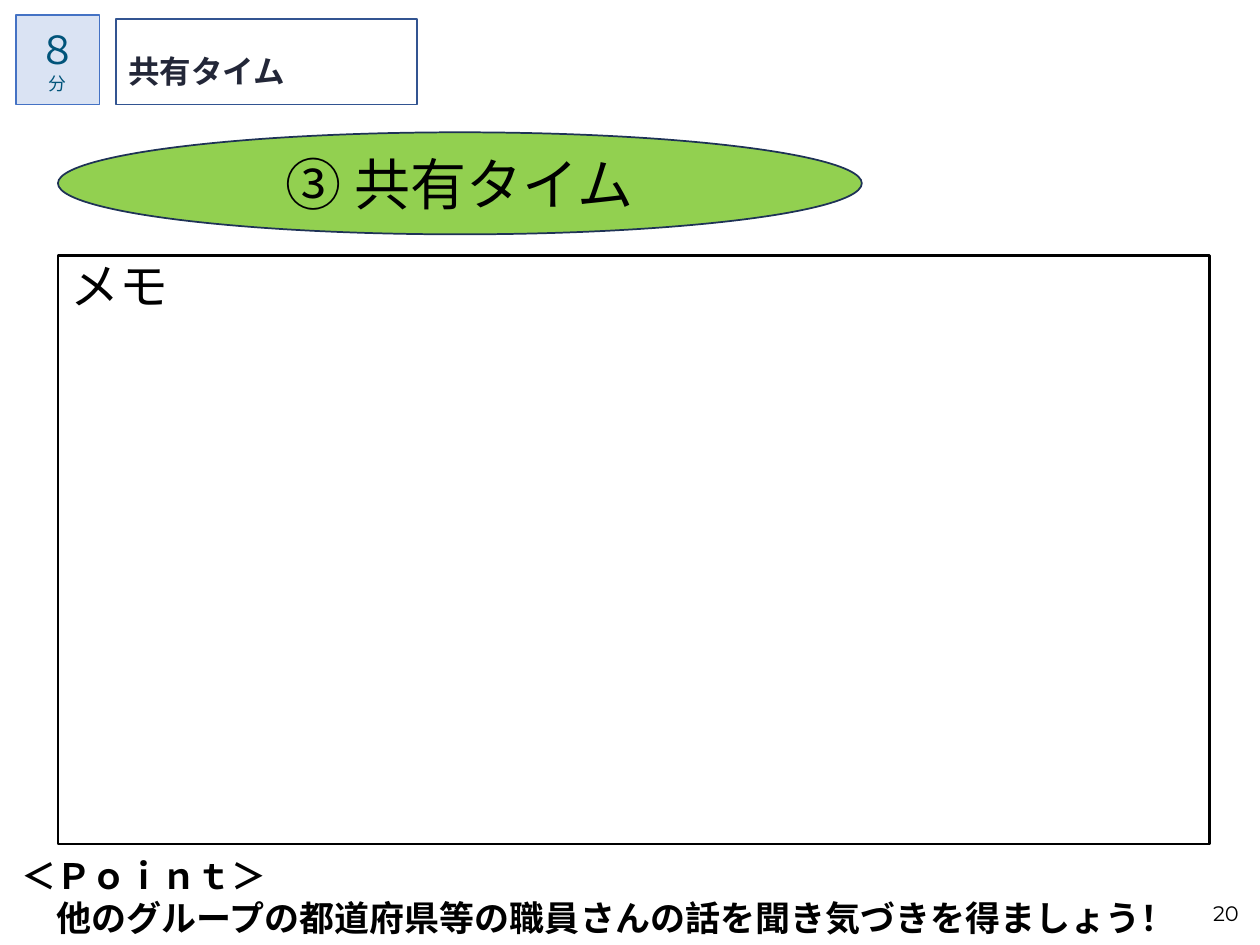
from lxml import etree
from pptx import Presentation
from pptx.dml.color import RGBColor
from pptx.enum.shapes import MSO_SHAPE
from pptx.enum.text import MSO_ANCHOR, PP_ALIGN
from pptx.oxml.ns import qn
from pptx.util import Inches, Pt

RECT, OVAL = MSO_SHAPE.RECTANGLE, MSO_SHAPE.OVAL
TOP, MIDDLE = MSO_ANCHOR.TOP, MSO_ANCHOR.MIDDLE
LEFT, CENTER = PP_ALIGN.LEFT, PP_ALIGN.CENTER
SLIDE_W, SLIDE_H = Inches(10), Inches(7.5)
JP_FONT = "Noto Sans CJK JP"
BLACK = "000000"
MARGIN = 4.6  # left edge of the main content, % of the width


def color(hex_code):
    return RGBColor.from_string(hex_code)


def area(x, y, w, h):
    """Turn percentages of the slide's size into lengths."""
    return [int(size * share / 100) for size, share in
            ((SLIDE_W, x), (SLIDE_H, y), (SLIDE_W, w), (SLIDE_H, h))]


def add_box(slide, kind, box, line, width=1, fill=None, anchor=MIDDLE):
    sp = slide.shapes.add_shape(kind, *area(*box))
    sp.shadow.inherit = False
    if fill:
        sp.fill.solid()
        sp.fill.fore_color.rgb = color(fill)
    else:
        sp.fill.background()
    sp.line.color.rgb = color(line)
    sp.line.width = Pt(width)
    return setup_frame(sp, anchor)


def add_label(slide, box, anchor=TOP):
    return setup_frame(slide.shapes.add_textbox(*area(*box)), anchor)


def setup_frame(sp, anchor):
    tf = sp.text_frame
    tf.word_wrap = True
    tf.vertical_anchor = anchor
    return tf


def add_text(tf, text, size, font, fg=BLACK, bold=False, align=LEFT,
             spacing=None, before=0, indent=0):
    p = tf.paragraphs[0] if not tf.text else tf.add_paragraph()
    p.alignment = align
    p.space_before = Pt(before)
    if spacing:
        p.line_spacing = spacing
    if indent:
        p._p.get_or_add_pPr().set("marL", str(Pt(indent)))
    r = p.add_run()
    r.text = text
    r.font.size = Pt(size)
    r.font.name = font
    r.font.bold = bold
    r.font.color.rgb = color(fg)
    # Japanese glyphs take the East Asian font
    ea = etree.SubElement(r.font._element, qn("a:ea"))
    ea.set("typeface", JP_FONT)


def main():
    prs = Presentation()
    prs.slide_width, prs.slide_height = SLIDE_W, SLIDE_H
    slide = prs.slides.add_slide(prs.slide_layouts[6])

    # Activity name
    tf = add_box(slide, OVAL, (MARGIN, 14, 63.8, 10.8), "1E3256", fill="92D050")
    add_text(tf, "③ 共有タイム", 32, JP_FONT, align=CENTER)

    # Memo area
    tf = add_box(slide, RECT, (MARGIN, 27.07, 91.4, 62.27), BLACK, 1.5, anchor=TOP)
    add_text(tf, "メモ", 28, "Calibri", spacing=0.9, before=10)

    # Page number
    tf = add_label(slide, (94.6, 93.33, 5.4, 6.67), MIDDLE)
    add_text(tf, "20", 12, "Montserrat", align=CENTER)

    # Time allowance and heading
    tf = add_box(slide, RECT, (1.3, 1.6, 6.6, 9.47), "4472C4", fill="DAE3F3")
    for text, size in (("８", 22.1), ("分", 10.2)):
        add_text(tf, text, size, "Lato", "01547A", align=CENTER)
    tf = add_box(slide, RECT, (9.2, 2, 23.9, 9.07), "325491")
    add_text(tf, "共有タイム", 18, "Lato", "232738", bold=True, spacing=1.5)

    # Point to remember
    tf = add_label(slide, (0.7, 89.73, 93.9, 10.27))
    add_text(tf, "＜Ｐｏｉｎｔ＞", 20, "Calibri", bold=True)
    add_text(tf, "他のグループの都道府県等の職員さんの話を聞き気づきを得ましょう！",
             20, "Calibri", bold=True, indent=20)

    prs.save("out.pptx")


if __name__ == "__main__":
    main()
